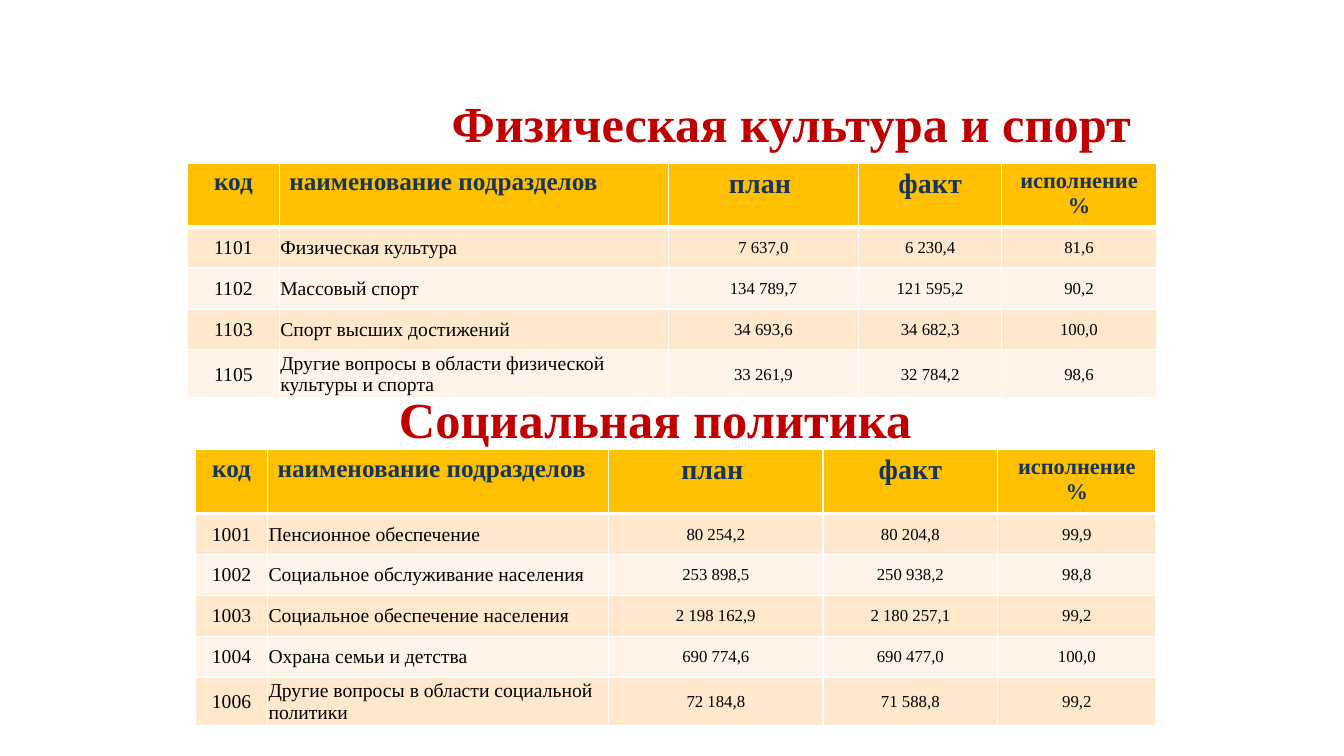
"""Build a slide with two budget execution tables: sport and social policy."""
from dataclasses import dataclass, field
from typing import Any

from lxml import etree
from pptx import Presentation
from pptx import util as u
from pptx.dml import color
from pptx.enum import text
from pptx.oxml import ns

CENTER, LEFT = text.PP_ALIGN.CENTER, text.PP_ALIGN.LEFT


@dataclass(frozen=True)
class Theme:
    """Colours, font and type sizes of the slide."""
    font: str = "Times New Roman"
    heading: str = "C00000"
    header_text: str = "163558"
    body_text: str = "000000"
    header_fill: str = "FFC000"
    bands: tuple[str, str] = ("FFE8CC", "FFF4E7")
    border: str = "FFFFFF"
    heading_size: float = 36
    header_sizes: tuple[float, ...] = (18, 18, 20, 20, 16)
    body_sizes: tuple[float, ...] = (14, 14, 12, 12, 12)
    header_height: float = 45.7
    row_height: float = 29.2
    last_height: float = 34.3
    body_margin: float = 0.72


@dataclass(frozen=True)
class Heading:
    """A section heading and its frame in points."""
    words: str
    left: float
    top: float
    width: float
    height: float = 51.1


@dataclass(frozen=True)
class Budget:
    """A budget table, its position and column widths in points."""
    left: float
    top: float
    columns: tuple[float, ...]
    rows: list[tuple[str, ...]] = field(default_factory=list)


THEME = Theme()
HEADER = ("код", "наименование подразделов", "план ", "факт", "исполнение %")
SPORT_HEADING = Heading("Физическая культура и спорт", 315.4, 61.9, 501.1)
SOCIAL_HEADING = Heading("Социальная политика", 277.9, 273.6, 384.5)
SOCIAL = Budget(139.7, 321.1, (51.4, 243.8, 153, 124.9, 112.9), [
    ("1001", "Пенсионное обеспечение", "80 254,2", "80 204,8", "99,9"),
    ("1002", "Социальное обслуживание населения", "253 898,5", "250 938,2", "98,8"),
    ("1003", "Социальное обеспечение населения", "2 198 162,9", "2 180 257,1", "99,2"),
    ("1004", "Охрана семьи и детства", "690 774,6", "690 477,0", "100,0"),
    ("1006", "Другие вопросы в области социальной политики",
     "72 184,8", "71 588,8", "99,2"),
])
SPORT = Budget(134, 116.6, (65.5, 277.9, 136, 102.2, 110.4), [
    ("1101", "Физическая культура", "7 637,0", "6 230,4", "81,6"),
    ("1102", "Массовый спорт", "134 789,7", "121 595,2", "90,2"),
    ("1103", "Спорт высших достижений", "34 693,6", "34 682,3", "100,0"),
    ("1105", "Другие вопросы в области физической культуры и спорта",
     "33 261,9", "32 784,2", "98,6"),
])


def assign(target: Any, values: dict[str, Any]) -> None:
    """Set every named attribute of the target."""
    for name, value in values.items():
        setattr(target, name, value)


def write(paragraph: Any, words: str, size: float, ink: str, bold: bool,
          alignment: Any) -> None:
    """Fill a paragraph with one formatted run."""
    paragraph.alignment = alignment
    run = paragraph.add_run()
    run.text = words
    assign(run.font, {"name": THEME.font, "size": u.Pt(size), "bold": bold})
    run.font.color.rgb = color.RGBColor.from_string(ink)


def draw_heading(holder: Any, heading: Heading) -> None:
    """Place and format a heading in the given text holder."""
    assign(holder, {name: u.Pt(getattr(heading, name))
                    for name in ("left", "top", "width", "height")})
    assign(holder.text_frame, {
        "word_wrap": False,
        "auto_size": text.MSO_AUTO_SIZE.SHAPE_TO_FIT_TEXT,
        "vertical_anchor": text.MSO_ANCHOR.TOP,
    })
    write(holder.text_frame.paragraphs[0], heading.words, THEME.heading_size,
          THEME.heading, True, LEFT)


def draw_borders(cell: Any, bottom: float) -> None:
    """Outline a cell with thin lines and the given bottom width."""
    properties = cell._tc.get_or_add_tcPr()
    for tag, width in {"lnL": 1, "lnR": 1, "lnT": 1, "lnB": bottom}.items():
        line = etree.SubElement(properties, ns.qn(f"a:{tag}"), w=str(u.Pt(width)))
        solid = etree.SubElement(line, ns.qn("a:solidFill"))
        etree.SubElement(solid, ns.qn("a:srgbClr"), val=THEME.border)


def draw_cell(cell: Any, words: str, row: int, column: int) -> None:
    """Format one cell as part of the header or of a banded body row."""
    header = row == 0
    draw_borders(cell, 3 if header else 1)
    cell.fill.solid()
    cell.fill.fore_color.rgb = color.RGBColor.from_string(
        THEME.header_fill if header else THEME.bands[(row - 1) % 2])
    if not header:
        margin = u.Pt(THEME.body_margin)
        assign(cell, {"vertical_anchor": text.MSO_ANCHOR.MIDDLE,
                      "margin_left": margin, "margin_right": margin,
                      "margin_top": margin, "margin_bottom": 0})
    sizes = THEME.header_sizes if header else THEME.body_sizes
    write(cell.text_frame.paragraphs[0], words, sizes[column],
          THEME.header_text if header else THEME.body_text, header,
          LEFT if column == 1 else CENTER)


def draw_budget(slide: Any, budget: Budget) -> None:
    """Add a budget table with its header row."""
    lines = [HEADER, *budget.rows]
    heights = [THEME.header_height,
               *[THEME.row_height] * (len(budget.rows) - 1), THEME.last_height]
    table = slide.shapes.add_table(
        len(lines), len(HEADER), u.Pt(budget.left), u.Pt(budget.top),
        u.Pt(sum(budget.columns)), u.Pt(sum(heights))).table
    for column, width in zip(table.columns, budget.columns):
        column.width = u.Pt(width)
    for row, (line, height) in enumerate(zip(lines, heights)):
        table.rows[row].height = u.Pt(height)
        for column, words in enumerate(line):
            draw_cell(table.cell(row, column), words, row, column)


def main() -> None:
    """Build and save the slide."""
    deck = Presentation()
    assign(deck, {"slide_width": u.Pt(960), "slide_height": u.Pt(540)})
    slide = deck.slides.add_slide(deck.slide_layouts.get_by_name("Title Only"))
    draw_heading(slide.shapes.title, SPORT_HEADING)
    draw_heading(slide.shapes.add_textbox(0, 0, 0, 0), SOCIAL_HEADING)
    for budget in (SOCIAL, SPORT):
        draw_budget(slide, budget)
    deck.save("out.pptx")


if __name__ == "__main__":
    main()
